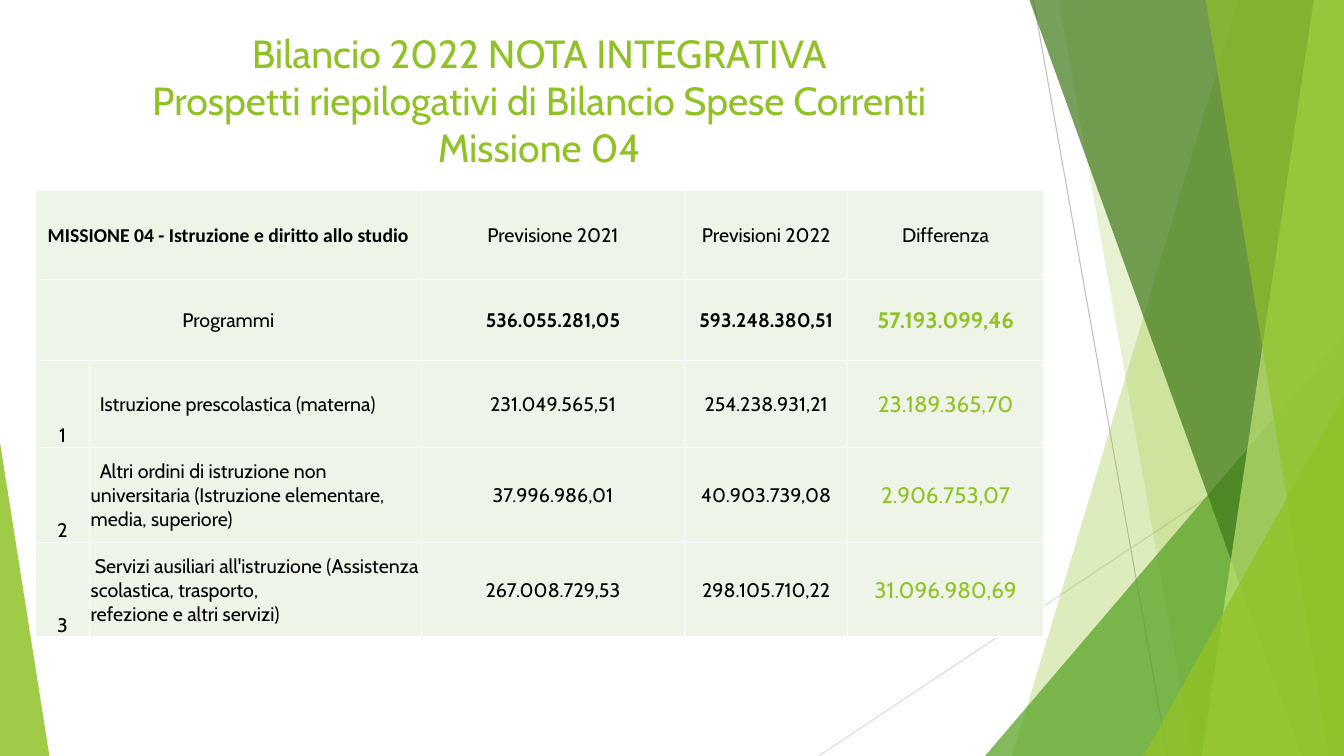
from lxml import etree
from pptx import Presentation
from pptx.dml.color import RGBColor
from pptx.enum import shapes, text
from pptx.oxml import ns
from pptx.util import Inches, Pt

LIME = RGBColor(0x90, 0xC2, 0x26)
GREEN = RGBColor(0x54, 0xA0, 0x21)
DARK = RGBColor(0x3F, 0x78, 0x19)
PALE = RGBColor(0xC0, 0xE4, 0x74)
MIST = RGBColor(0xEE, 0xF4, 0xE8)
GREY = RGBColor(0xBF, 0xBF, 0xBF)
SILVER = RGBColor(0xD9, 0xD9, 0xD9)
BLACK = RGBColor(0, 0, 0)
WIDE, HIGH = 13.33, 7.5


def paint(shape, color, alpha):
    """Fill a shape with a see-through colour, without line or shadow."""
    shape.shadow.inherit = False
    shape.line.fill.background()
    shape.fill.solid()
    shape.fill.fore_color.rgb = color
    tint = shape.element.spPr.find(".//" + ns.qn("a:srgbClr"))
    etree.SubElement(tint, ns.qn("a:alpha"), val=str(alpha * 1000))


def edge(cell):
    """Give a cell thin white borders."""
    props = cell._tc.get_or_add_tcPr()
    for side in ("lnL", "lnR", "lnT", "lnB"):
        line = etree.SubElement(props, ns.qn("a:" + side), w=str(Pt(1)))
        fill = etree.SubElement(line, ns.qn("a:solidFill"))
        etree.SubElement(fill, ns.qn("a:srgbClr"), val="FFFFFF")


deck = Presentation()
deck.slide_width, deck.slide_height = Inches(WIDE), Inches(HIGH)
slide = deck.slides.add_slide(deck.slide_layouts[5])
items = slide.shapes

# Thin background lines
for x1, y1, x2, color in ((10.25, 0, 11.58, GREY), (WIDE, 4.03, 8.12, SILVER)):
    line = items.add_connector(shapes.MSO_CONNECTOR.STRAIGHT, Inches(x1),
                               Inches(y1), Inches(x2), Inches(HIGH))
    line.line.color.rgb = color
    line.line.width = Pt(0.75)
    etree.SubElement(line.element.spPr, ns.qn("a:effectLst"))

# Green facets: bands by top and bottom x, triangles by box and apex
facets = (
    ("band", (12.28, 10.04), LIME, 30),
    ("band", (10.5, 11.83), LIME, 20),
    ("peak", (9.77, 3.33, 3.56, 1), GREEN, 72),
    ("band", (10.21, 12.91), DARK, 70),
    ("band", (13.03, 11.92), PALE, 70),
    ("band", (11.96, 13.18), LIME, 65),
    ("peak", (11.34, 3.93, 1.99, 1), LIME, 80),
    ("peak", (0, 4.39, 0.49, 0), LIME, 85),
)
for kind, place, color, alpha in facets:
    if kind == "band":
        top, base = place
        path = items.build_freeform(Inches(top), 0)
        path.add_line_segments([(Inches(x), Inches(y)) for x, y in
                                ((WIDE, 0), (WIDE, HIGH), (base, HIGH))])
        facet = path.convert_to_shape()
    else:
        left, top, width, apex = place
        facet = items.add_shape(
            shapes.MSO_SHAPE.ISOSCELES_TRIANGLE, Inches(left), Inches(top),
            Inches(width), Inches(HIGH - top))
        facet.adjustments[0] = apex
    paint(facet, color, alpha)

# Title, in front of the facets
title = items.title
title.element.getparent().append(title.element)
title.left, title.top = Inches(0.18), Inches(0.24)
title.width, title.height = Inches(10.42), Inches(0.49)
frame = title.text_frame
frame.text = ("Bilancio 2022 NOTA INTEGRATIVA \v"
              "Prospetti riepilogativi di Bilancio Spese Correnti \v"
              "Missione 04 ")
frame.word_wrap = True
frame.auto_size = text.MSO_AUTO_SIZE.NONE
frame.vertical_anchor = text.MSO_ANCHOR.TOP
para = frame.paragraphs[0]
para.alignment = text.PP_ALIGN.CENTER
para.font.name, para.font.size = "Cabin", Pt(28)
para.font.color.rgb = LIME

# Budget table
rows = (
    ("MISSIONE 04 - Istruzione e diritto allo studio", "",
     "Previsione 2021", "Previsioni 2022", "Differenza"),
    ("Programmi", "", "536.055.281,05", "593.248.380,51", "57.193.099,46"),
    ("1", "Istruzione prescolastica (materna)",
     "231.049.565,51", "254.238.931,21", "23.189.365,70"),
    ("2", "Altri ordini di istruzione non universitaria "
     "(Istruzione elementare, media, superiore)",
     "37.996.986,01", "40.903.739,08", "2.906.753,07"),
    ("3", "Servizi ausiliari all'istruzione (Assistenza scolastica, "
     "trasporto,\nrefezione e altri servizi)",
     "267.008.729,53", "298.105.710,22", "31.096.980,69"),
)
widths = (0.54, 3.29, 2.61, 1.62, 1.94)
heights = (0.88, 0.81, 0.86, 0.94, 0.94)
indents = {2: 0.09, 3: 0.09, 4: 0.04}
table = items.add_table(len(rows), len(widths), Inches(0.35), Inches(1.89),
                        Inches(sum(widths)), Inches(sum(heights))).table
for col, width in zip(table.columns, widths):
    col.width = Inches(width)
for row, height in zip(table.rows, heights):
    row.height = Inches(height)
for r in (0, 1):
    table.cell(r, 0).merge(table.cell(r, 1))

for r, row in enumerate(rows):
    for c, words in enumerate(row):
        cell = table.cell(r, c)
        edge(cell)
        cell.fill.solid()
        cell.fill.fore_color.rgb = MIST
        cell.margin_left = cell.margin_right = cell.margin_top = Inches(0.01)
        cell.margin_bottom = 0
        number = c == 0 and r > 1
        cell.vertical_anchor = (text.MSO_ANCHOR.BOTTOM if number
                                else text.MSO_ANCHOR.MIDDLE)
        if cell.is_spanned:
            continue
        cell.text = words
        label = c == 1
        change = c == 4 and r > 0
        for para in cell.text_frame.paragraphs:
            para.alignment = (text.PP_ALIGN.LEFT if label
                              else text.PP_ALIGN.CENTER)
            font = para.font
            font.name = "Calibri" if r == c == 0 else "Cabin"
            font.size = Pt(16 if change else 14)
            font.bold = r == c == 0 or (r == 1 and c > 1)
            font.color.rgb = LIME if change else BLACK
        if label:
            first = cell.text_frame.paragraphs[0]
            first._p.get_or_add_pPr().set("indent", str(Inches(indents[r])))

deck.save("out.pptx")
